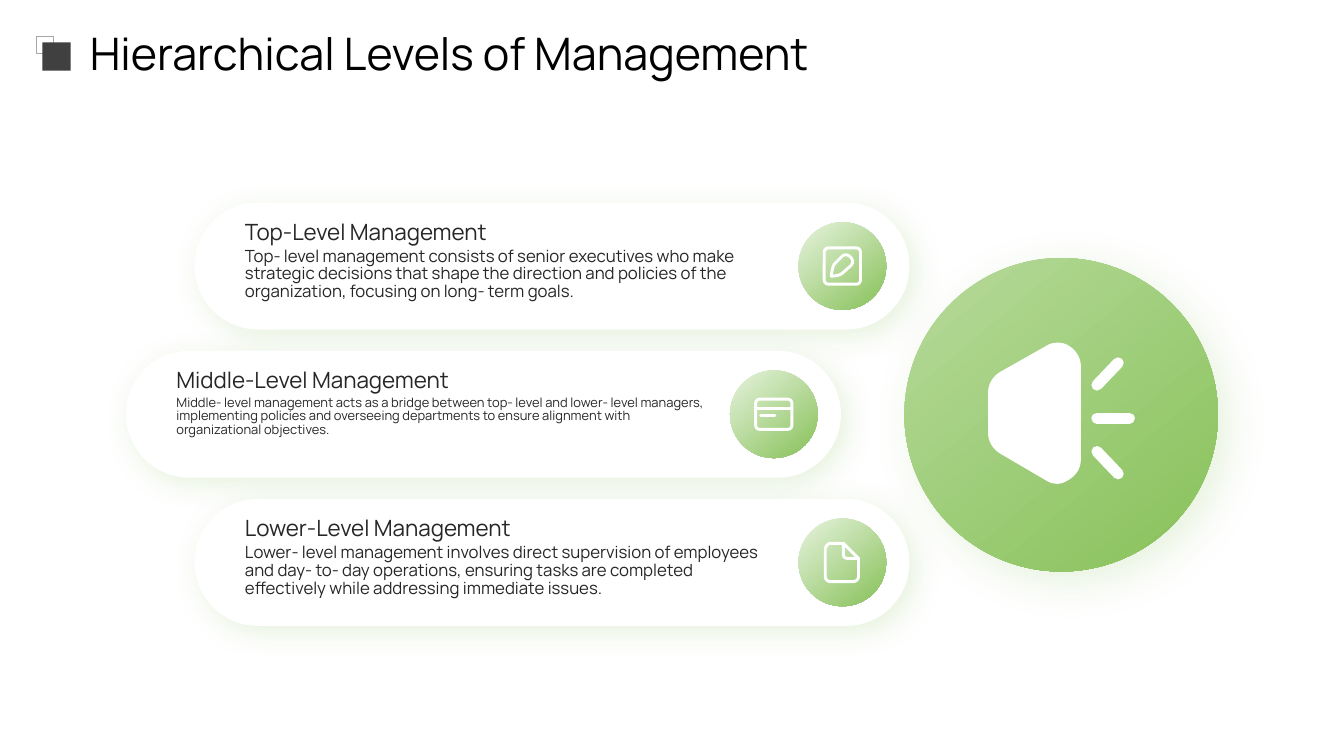
import pptx
import pptx.util
import pptx.dml.color
import pptx.enum.shapes
import pptx.enum.text
from lxml import etree
from pptx.oxml.ns import qn

Inches, Pt = pptx.util.Inches, pptx.util.Pt
SHAPE = pptx.enum.shapes.MSO_SHAPE
FONT = "Manrope"
COLORS = {"green": "87C159", "mid": "B7DA9B", "pale": "E7F3DE", "white": "FFFFFF",
          "text": "262626", "black": "000000", "grey": "A6A6A6", "dark": "404040"}

TITLE = "Hierarchical Levels of Management"
# heading, description, description size, left edge, icon
LEVELS = [
    ("Top-Level Management",
     "Top- level management consists of senior executives who make strategic decisions that "
     "shape the direction and policies of the organization, focusing on long- term goals.",
     12, 1.93, "pen"),
    ("Middle-Level Management",
     "Middle- level management acts as a bridge between top- level and lower- level managers, "
     "implementing policies and overseeing departments to ensure alignment with "
     "organizational objectives.",
     9.2, 1.25, "card"),
    ("Lower-Level Management",
     "Lower- level management involves direct supervision of employees and day- to- day "
     "operations, ensuring tasks are completed effectively while addressing immediate issues.",
     12, 1.93, "page"),
]
FIRST_TOP, PITCH = 2.01, 1.47
PILL_W, PILL_H, BADGE = 7.09, 1.26, 0.87

# Outlines: a pair is a line to a point, six numbers are a Bezier curve.
# Icon parts are offsets from the badge centre.
ICONS = {
    "pen": {
        "frames": [(-0.18, -0.18, 0.36, 0.36)],
        "outlines": [([(-0.11, 0.1), (-0.11, 0.1, -0.1, 0.01, -0.08, -0.02), (-0.01, -0.09),
                       (0.02, -0.12, 0.05, -0.12, 0.08, -0.09),
                       (0.11, -0.06, 0.11, -0.03, 0.08, 0), (0, 0.07),
                       (-0.03, 0.1, -0.11, 0.1, -0.11, 0.1)], True)],
    },
    "card": {
        "frames": [(-0.18, -0.15, 0.36, 0.3)],
        "lines": [(-0.18, -0.06, 0.18, -0.06), (-0.13, 0.01, 0.01, 0.01)],
    },
    "page": {
        "outlines": [([(0.01, -0.19), (-0.12, -0.19), (-0.14, -0.19, -0.17, -0.16, -0.17, -0.13),
                       (-0.17, 0.14), (-0.17, 0.17, -0.14, 0.19, -0.12, 0.19), (0.11, 0.19),
                       (0.13, 0.19, 0.16, 0.17, 0.16, 0.14), (0.16, -0.04)], True),
                     ([(0.01, -0.19), (0.01, -0.08), (0.01, -0.05, 0.03, -0.04, 0.06, -0.04),
                       (0.16, -0.04)], False)],
    },
}
HORN = [(10.49, 3.4), (10.53, 3.4, 10.57, 3.41, 10.6, 3.43),
        (10.67, 3.47, 10.72, 3.55, 10.72, 3.63), (10.72, 4.56),
        (10.72, 4.65, 10.67, 4.72, 10.6, 4.76), (10.57, 4.78, 10.53, 4.8, 10.49, 4.8),
        (10.45, 4.8, 10.41, 4.79, 10.38, 4.77), (9.92, 4.5),
        (9.85, 4.46, 9.8, 4.38, 9.8, 4.3), (9.8, 3.89),
        (9.8, 3.81, 9.85, 3.73, 9.92, 3.69), (10.38, 3.43),
        (10.41, 3.41, 10.45, 3.4, 10.49, 3.4)]
RAYS = [(10.88, 3.82, 11.09, 3.6), (10.88, 4.15, 11.2, 4.15), (10.88, 4.48, 11.09, 4.7)]


def rgb(name):
    return pptx.dml.color.RGBColor.from_string(COLORS[name])


def paint(sp, fill=None, line=None, width=1):
    """Fill is a colour name, a pair of names for a gradient, or None."""
    sp.shadow.inherit = False
    if fill is None:
        sp.fill.background()
    elif isinstance(fill, tuple):
        sp.fill.gradient()
        sp.fill.gradient_angle = 310
        for stop, name in zip(sp.fill.gradient_stops, fill):
            stop.color.rgb = rgb(name)
    else:
        sp.fill.solid()
        sp.fill.fore_color.rgb = rgb(fill)
    if line:
        sp.line.color.rgb = rgb(line)
        sp.line.width = Pt(width)
    else:
        sp.line.fill.background()
    return sp


def add_preset(kind, x, y, w, h, **look):
    return paint(s.shapes.add_shape(kind, Inches(x), Inches(y), Inches(w), Inches(h)), **look)


def add_glow(sp, blur, dist):
    """Soft green shadow towards the lower right."""
    effects = sp._element.spPr.find(qn("a:effectLst"))
    shadow = etree.SubElement(effects, qn("a:outerShdw"), blurRad=str(Pt(blur)),
                              dist=str(Pt(dist)), dir=str(45 * 60000), algn="ctr",
                              rotWithShape="0")
    color = etree.SubElement(shadow, qn("a:srgbClr"), val=COLORS["green"])
    etree.SubElement(color, qn("a:alpha"), val="20000")


def add_line(x1, y1, x2, y2, width):
    c = s.shapes.add_connector(pptx.enum.shapes.MSO_CONNECTOR.STRAIGHT,
                               *[Inches(v) for v in (x1, y1, x2, y2)])
    c.line.color.rgb = rgb("white")
    c.line.width = Pt(width)
    c.line._get_or_add_ln().set("cap", "rnd")
    etree.SubElement(c._element.spPr, qn("a:effectLst"))


def flatten(outline, steps=8):
    """Turn lines and Bezier curves into a list of points."""
    points = [outline[0]]
    for part in outline[1:]:
        if len(part) == 2:
            points.append(part)
            continue
        start = points[-1]
        for i in range(1, steps + 1):
            t = i / steps
            u = 1 - t
            points.append(tuple(u**3 * start[k] + 3 * u * u * t * part[k]
                                + 3 * u * t * t * part[k + 2] + t**3 * part[k + 4]
                                for k in (0, 1)))
    return points


def add_outline(outline, dx=0, dy=0, close=True, **look):
    points = [(Inches(x + dx), Inches(y + dy)) for x, y in flatten(outline)]
    builder = s.shapes.build_freeform(*points[0])
    builder.add_line_segments(points[1:], close=close)
    return paint(builder.convert_to_shape(), **look)


def add_icon(name, cx, cy):
    icon = ICONS[name]
    stroke = {"line": "white", "width": 2.1}
    for x, y, w, h in icon.get("frames", []):
        frame = add_preset(SHAPE.ROUNDED_RECTANGLE, cx + x, cy + y, w, h, **stroke)
        frame.adjustments[0] = 0.04 / h
    for outline, close in icon.get("outlines", []):
        add_outline(outline, cx, cy, close, **stroke)
    for x1, y1, x2, y2 in icon.get("lines", []):
        add_line(cx + x1, cy + y1, cx + x2, cy + y2, stroke["width"])


def set_text(sp, text, size, color, spacing=1.0, anchor="TOP"):
    tf = sp.text_frame
    frame_format = {"margin_left": 0, "margin_top": 0, "margin_right": 0, "margin_bottom": 0,
                    "word_wrap": True, "auto_size": pptx.enum.text.MSO_AUTO_SIZE.NONE,
                    "vertical_anchor": getattr(pptx.enum.text.MSO_ANCHOR, anchor)}
    for key, value in frame_format.items():
        setattr(tf, key, value)
    p = tf.paragraphs[0]
    p.alignment = pptx.enum.text.PP_ALIGN.LEFT
    p.line_spacing = spacing
    r = p.add_run()
    r.text = text
    for key, value in {"name": FONT, "size": Pt(size)}.items():
        setattr(r.font, key, value)
    r.font.color.rgb = rgb(color)


def add_text(x, y, w, h, *args, **kwargs):
    set_text(s.shapes.add_textbox(Inches(x), Inches(y), Inches(w), Inches(h)), *args, **kwargs)


prs = pptx.Presentation()
prs.slide_width, prs.slide_height = Inches(13.33), Inches(7.5)
s = prs.slides.add_slide(prs.slide_layouts[5])

title = s.shapes.title
title.left, title.top, title.width, title.height = [Inches(v) for v in (0.89, 0.29, 11.9, 0.47)]
set_text(title, TITLE, 32, "black", anchor="MIDDLE")
add_preset(SHAPE.RECTANGLE, 0.36, 0.36, 0.17, 0.17, line="grey")
add_preset(SHAPE.RECTANGLE, 0.42, 0.42, 0.28, 0.28, fill="dark")

add_glow(add_preset(SHAPE.OVAL, 8.97, 2.56, 3.11, 3.11, fill=("mid", "green")), 30, 10)
add_outline(HORN, fill="white")
for ray in RAYS:
    add_line(*ray, width=8)

for i, (heading, description, size, x, icon) in enumerate(LEVELS):
    y = FIRST_TOP + i * PITCH
    pill = add_preset(SHAPE.ROUNDED_RECTANGLE, x, y, PILL_W, PILL_H, fill="white")
    pill.adjustments[0] = 0.5
    add_glow(pill, 20, 6)
    badge_x, badge_y = x + 5.99, y + (PILL_H - BADGE) / 2
    add_preset(SHAPE.OVAL, badge_x, badge_y, BADGE, BADGE, fill=("pale", "green"))
    add_text(x + 0.5, y + 0.15, 5.28, 0.3, heading, 16, "text")
    add_text(x + 0.5, y + 0.45, 5.28, 0.71, description, size, "text", spacing=0.88)
    add_icon(icon, badge_x + BADGE / 2, badge_y + BADGE / 2)

prs.save("out.pptx")
